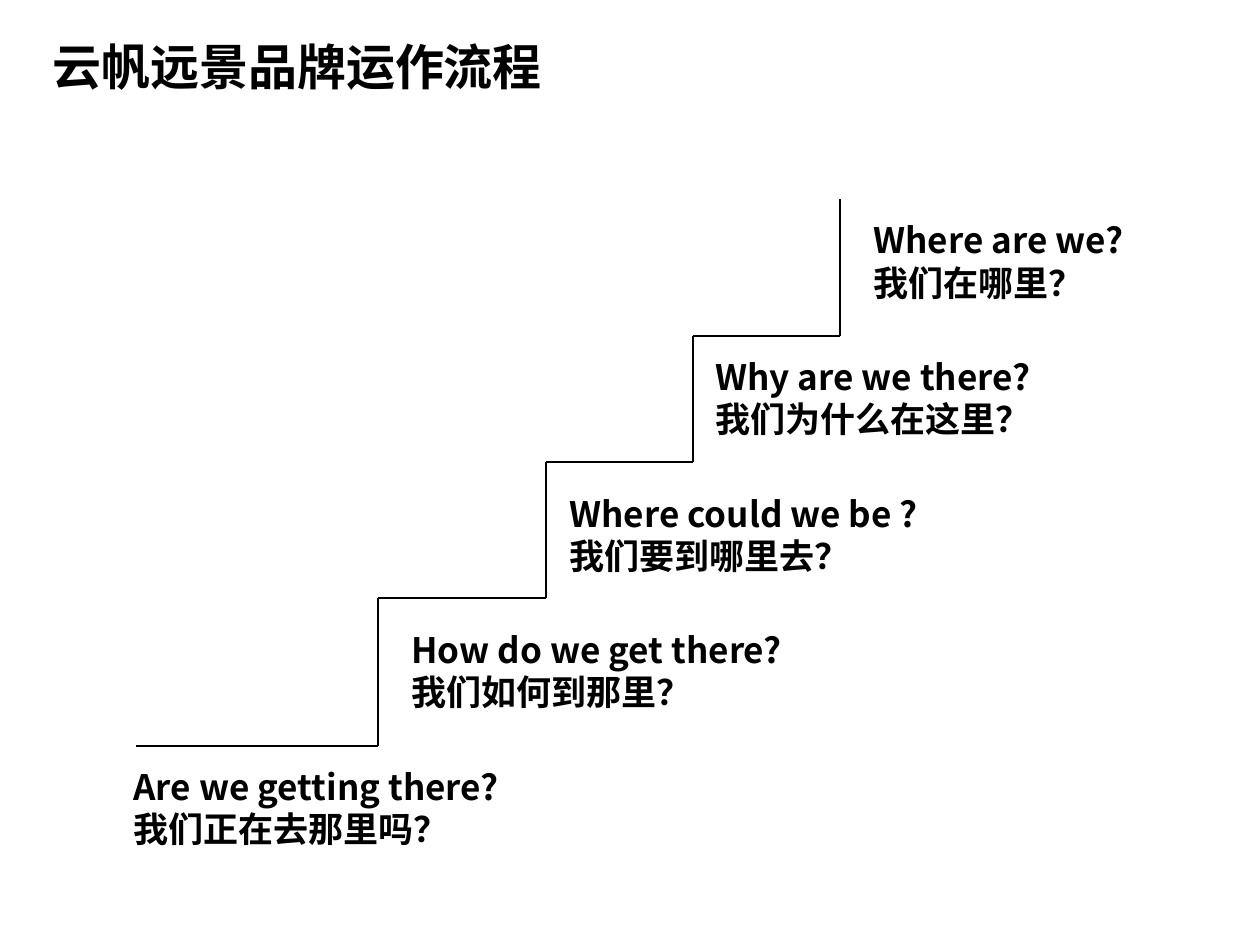
from itertools import pairwise

from lxml import etree
from pptx import Presentation, util as u
from pptx.dml.color import RGBColor
from pptx.enum import shapes, text
from pptx.oxml import ns

PX_PER_INCH = 126
BLACK = RGBColor(0, 0, 0)
WHITE = RGBColor(255, 255, 255)
FONT = "Noto Sans CJK SC"

TITLE = "云帆远景品牌运作流程"

# Questions from the top step down: left, width, English, Chinese
QUESTIONS = [
    (861, 315, "Where are we?", "我们在哪里？"),
    (703, 388, "Why are we there?", "我们为什么在这里？"),
    (557, 441, "Where could we be ?", "我们要到哪里去？"),
    (399, 451, "How do we get there?", "我们如何到那里？"),
    (121, 420, "Are we getting there?", "我们正在去那里吗？"),
]
FIRST_TOP, LAST_TOP, QUESTION_HEIGHT = 210, 756, 97

# Each riser runs down at x to the tread at y
STAIR_TOP = 199
STEPS = [(840, 336), (693, 462), (546, 598), (378, 746)]
STAIR_LEFT = 136


def px(length):
    return u.Inches(length / PX_PER_INCH)


class Deck:
    """Holds the text and line style together with the current slide."""

    def __init__(self, width, height):
        self.prs = Presentation()
        self.prs.slide_width, self.prs.slide_height = px(width), px(height)
        self.slide = self.prs.slides.add_slide(self.prs.slide_layouts[5])
        fill = self.slide.background.fill
        fill.solid()
        fill.fore_color.rgb = WHITE

    def set_text(self, frame, lines, size, wrap):
        frame.text = "\n".join(lines)
        frame.word_wrap = wrap
        frame.auto_size = text.MSO_AUTO_SIZE.NONE
        frame.vertical_anchor = text.MSO_ANCHOR.TOP
        frame.margin_top, frame.margin_bottom = px(9), px(4)
        for paragraph in frame.paragraphs:
            paragraph.alignment = text.PP_ALIGN.LEFT
            paragraph.line_spacing = u.Pt(size * 1.2)
            for run in paragraph.runs:
                font = run.font
                font.name, font.size, font.bold = FONT, u.Pt(size), True
                font.color.rgb = BLACK
                east_asian = etree.SubElement(run._r.get_or_add_rPr(), ns.qn("a:ea"))
                east_asian.set("typeface", FONT)

    def title(self, left, top, width, height, line):
        title = self.slide.shapes.title
        title.left, title.top = px(left), px(top)
        title.width, title.height = px(width), px(height)
        self.set_text(title.text_frame, [line], 28, wrap=False)

    def label(self, left, top, width, height, lines):
        box = self.slide.shapes.add_textbox(px(left), px(top), px(width), px(height))
        self.set_text(box.text_frame, lines, 20, wrap=True)

    def line(self, start, end):
        line = self.slide.shapes.add_connector(
            shapes.MSO_CONNECTOR.STRAIGHT, *map(px, start + end))
        line.line.color.rgb = BLACK
        line.line.width = u.Pt(1)
        etree.SubElement(line._element.spPr, ns.qn("a:effectLst"))


def main():
    deck = Deck(1260, 945)
    deck.title(40, 28, 520, 72, TITLE)

    pitch = (LAST_TOP - FIRST_TOP) / (len(QUESTIONS) - 1)
    for row, (left, width, english, chinese) in enumerate(QUESTIONS):
        top = FIRST_TOP + row * pitch
        deck.label(left, top, width, QUESTION_HEIGHT, [english, chinese])

    corners = [(STEPS[0][0], STAIR_TOP)]
    next_risers = [x for x, _ in STEPS[1:]] + [STAIR_LEFT]
    for (x, y), next_x in zip(STEPS, next_risers):
        corners += [(x, y), (next_x, y)]
    for start, end in pairwise(corners):
        deck.line(start, end)

    deck.prs.save("out.pptx")


if __name__ == "__main__":
    main()
